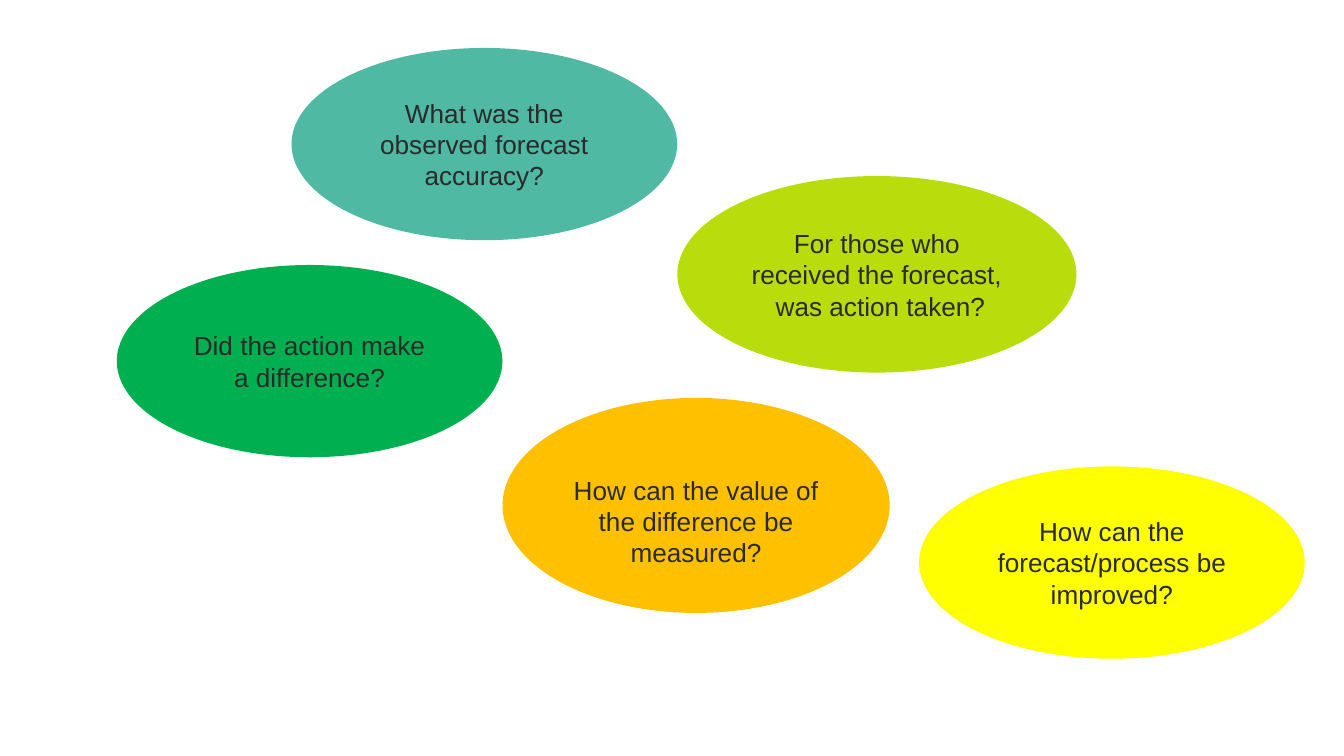
from pptx import Presentation
from pptx.dml.color import RGBColor as Rgb
from pptx.enum.shapes import MSO_SHAPE as Shape
from pptx.enum.text import MSO_ANCHOR as Anchor, PP_ALIGN as Align
from pptx.util import Pt


def tint(code):
    return Rgb.from_string(code)


class Deck:
    font = "Arial"
    size = 14
    ink = "2A2A2A"

    def __init__(self, wide, high):
        self.file = Presentation()
        self.file.slide_width = Pt(wide)
        self.file.slide_height = Pt(high)
        self.slide = self.file.slides.add_slide(self.file.slide_layouts[6])

    def bubble(self, words, fill, left, top, wide=206.6, high=103, inset=3.6):
        shape = self.slide.shapes.add_shape(
            Shape.OVAL, Pt(left), Pt(top), Pt(wide), Pt(high))
        shape.shadow.inherit = False
        shape.fill.solid()
        shape.fill.fore_color.rgb = tint(fill)
        shape.line.fill.background()
        frame = shape.text_frame
        frame.word_wrap = True
        frame.vertical_anchor = Anchor.MIDDLE
        frame.margin_top = Pt(inset)
        para = frame.paragraphs[0]
        para.alignment = Align.CENTER
        self.run(para, words)

    def run(self, para, words):
        run = para.add_run()
        run.text = words
        run.font.name = self.font
        run.font.size = Pt(self.size)
        run.font.color.rgb = tint(self.ink)


def main():
    deck = Deck(720, 405)
    deck.bubble("What was the observed forecast accuracy?",
                "50B9A4", 156.2, 25.7)
    deck.bubble("For those who received the forecast,  was action taken?",
                "B9DC0C", 362.9, 94.3, wide=213.8, high=105.3)
    deck.bubble("Did the action make a difference?",
                "00B050", 62.6, 142)
    deck.bubble("How can the value of the difference be measured?",
                "FFC000", 269.2, 213.2, wide=207.4, high=115.2, inset=20.4)
    deck.bubble("How can the forecast/process be improved?",
                "FFFF00", 492.4, 249.9)
    deck.file.save("out.pptx")


if __name__ == "__main__":
    main()
